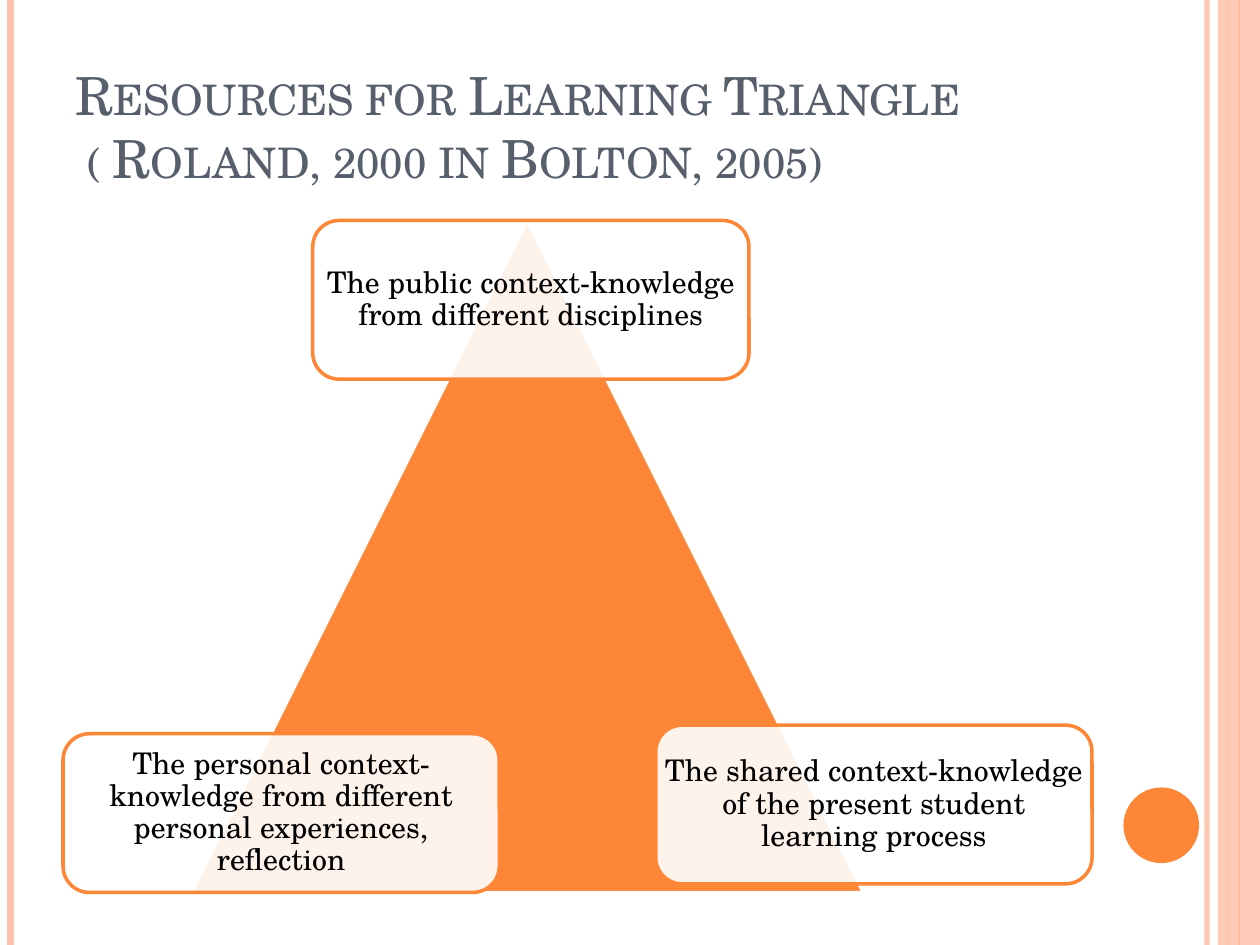
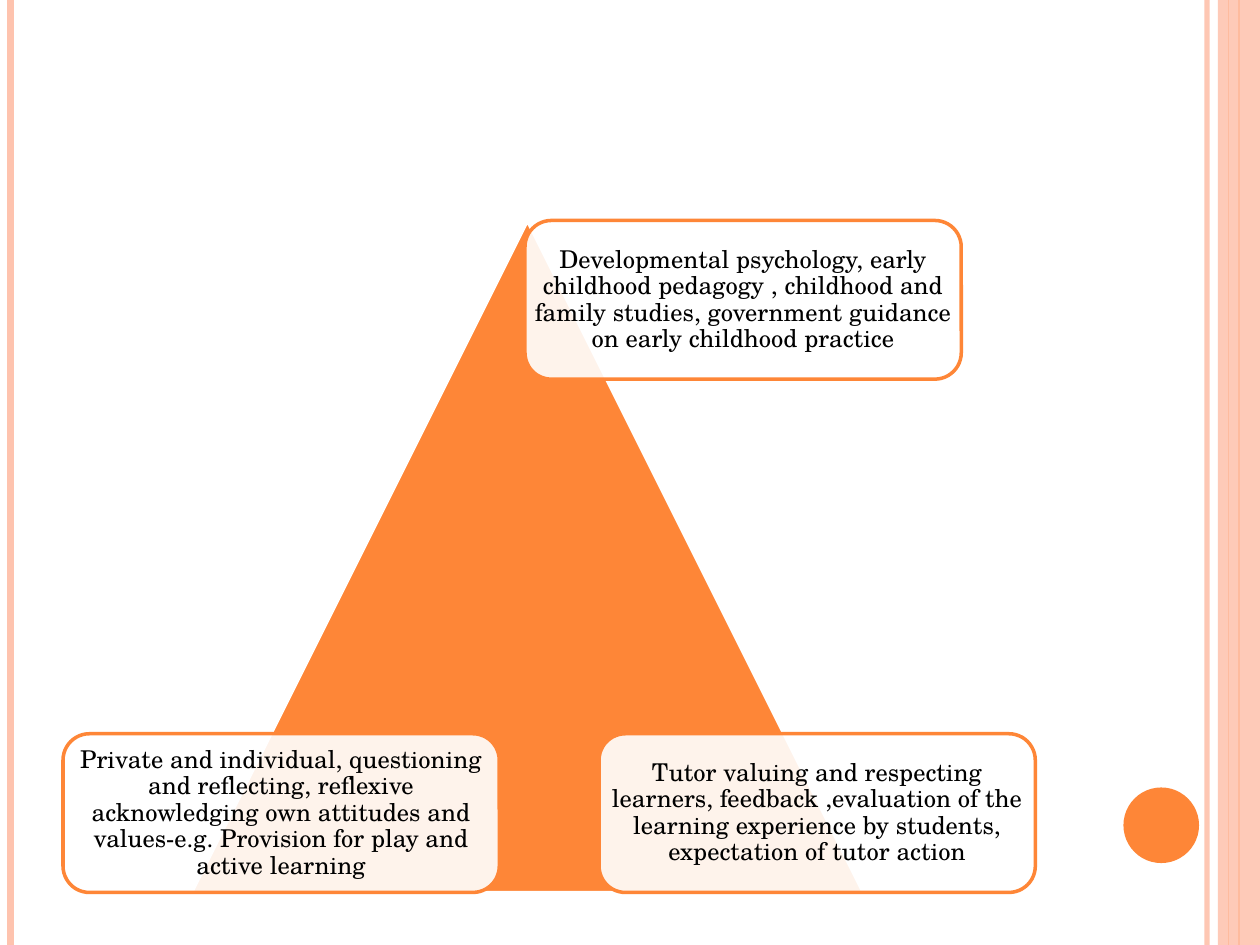
"""Build two slides showing triangles of resources for learning."""
from lxml.etree import SubElement
from pptx import Presentation
from pptx.dml.color import RGBColor
from pptx.enum.shapes import MSO_CONNECTOR, MSO_SHAPE
from pptx.enum.text import MSO_ANCHOR, PP_ALIGN
from pptx.oxml.ns import qn
from pptx.util import Pt

COLORS = {"orange": "FE8637", "peach": "FEC3AE", "slate": "575F6D", "white": "FFFFFF", "black": "000000"}
FONT = "TeX Gyre Schola"
WIDTH, HEIGHT = 720, 540
CARD_WIDTH, CARD_HEIGHT = 249.3, 90.7
CARD_TOP, CARD_BOTTOM, CARD_LEFT = 126, 419.3, 36

RULES = [
    (689.8, "peach", 3, 93),
    (6, "peach", 4.5, 100),
    (708, "orange", 1.5, 100),
    (702, "orange", 0.75, 100),
]
SLIDES = [
    {
        "title": "Resources for Learning Triangle\v ( Roland, 2000 in Bolton, 2005)",
        "size": 17,
        "inset": 5.1,
        "cards": [
            (178.7, CARD_TOP, "The public context-knowledge from different disciplines"),
            (374.7, 414.4, "The shared context-knowledge of the present student learning process"),
            (CARD_LEFT, CARD_BOTTOM,
             "The personal context-knowledge from different personal experiences, reflection"),
        ],
    },
    {
        "title": None,
        "size": 14,
        "inset": 4.2,
        "cards": [
            (300, CARD_TOP,
             "Developmental psychology, early childhood pedagogy , childhood and family studies, "
             "government guidance on early childhood practice"),
            (CARD_LEFT, CARD_BOTTOM,
             "Private and individual, questioning and reflecting, reflexive acknowledging own "
             "attitudes and values-e.g. Provision for play and active learning"),
            (342.3, CARD_BOTTOM,
             "Tutor valuing and respecting learners, feedback ,evaluation of the learning "
             "experience by students, expectation of tutor action"),
        ],
    },
]


def set_opacity(shape, percent):
    color = shape._element.spPr.find(".//" + qn("a:srgbClr"))
    SubElement(color, qn("a:alpha")).set("val", str(percent * 1000))


def add_filled(page, kind, left, top, width, height, fill, line=None):
    shape = page.shapes.add_shape(kind, Pt(left), Pt(top), Pt(width), Pt(height))
    shape.shadow.inherit = False
    shape.fill.solid()
    shape.fill.fore_color.rgb = RGBColor.from_string(COLORS[fill])
    if line:
        shape.line.color.rgb = RGBColor.from_string(COLORS[line])
        shape.line.width = Pt(2)
    else:
        shape.line.fill.background()
    return shape


deck = Presentation()
deck.slide_width, deck.slide_height = Pt(WIDTH), Pt(HEIGHT)

for content in SLIDES:
    page = deck.slides.add_slide(deck.slide_layouts[6])

    band = add_filled(page, MSO_SHAPE.RECTANGLE, 696, 0, 24, HEIGHT, "peach")
    set_opacity(band, 87)
    for x, color, weight, opacity in RULES:
        rule = page.shapes.add_connector(MSO_CONNECTOR.STRAIGHT, Pt(x), Pt(0), Pt(x), Pt(HEIGHT))
        rule.line.color.rgb = RGBColor.from_string(COLORS[color])
        rule.line.width = Pt(weight)
        SubElement(rule._element.spPr, qn("a:effectLst"))
        if opacity < 100:
            set_opacity(rule, opacity)
        if color == "orange":
            page.shapes._spTree.remove(rule._element)
            band._element.addprevious(rule._element)
    add_filled(page, MSO_SHAPE.OVAL, 642, 450, 43.2, 43.2, "orange")

    if content["title"]:
        box = page.shapes.add_textbox(Pt(36), Pt(21.6), Pt(588), Pt(90))
        box.text_frame.word_wrap = True
        box.text_frame.vertical_anchor = MSO_ANCHOR.BOTTOM
        para = box.text_frame.paragraphs[0]
        para.text = content["title"]
        para.font.name, para.font.size = FONT, Pt(30)
        para.font.color.rgb = RGBColor.from_string(COLORS["slate"])
        para._p.pPr.find(qn("a:defRPr")).set("cap", "small")

    add_filled(page, MSO_SHAPE.ISOSCELES_TRIANGLE, 109.4, 126, 384, 384, "orange", "white")
    for left, top, text in content["cards"]:
        card = add_filled(page, MSO_SHAPE.ROUNDED_RECTANGLE, left, top,
                          CARD_WIDTH, CARD_HEIGHT, "white", "orange")
        set_opacity(card, 90)
        label = page.shapes.add_textbox(Pt(left), Pt(top), Pt(CARD_WIDTH), Pt(CARD_HEIGHT))
        frame = label.text_frame
        frame.word_wrap = True
        frame.vertical_anchor = MSO_ANCHOR.MIDDLE
        frame.margin_left = frame.margin_right = Pt(content["inset"])
        frame.margin_top = frame.margin_bottom = Pt(content["inset"])
        para = frame.paragraphs[0]
        para.text = text
        para.alignment = PP_ALIGN.CENTER
        para.line_spacing = 0.9
        para.font.name, para.font.size = FONT, Pt(content["size"])
        para.font.color.rgb = RGBColor.from_string(COLORS["black"])

deck.save("out.pptx")
